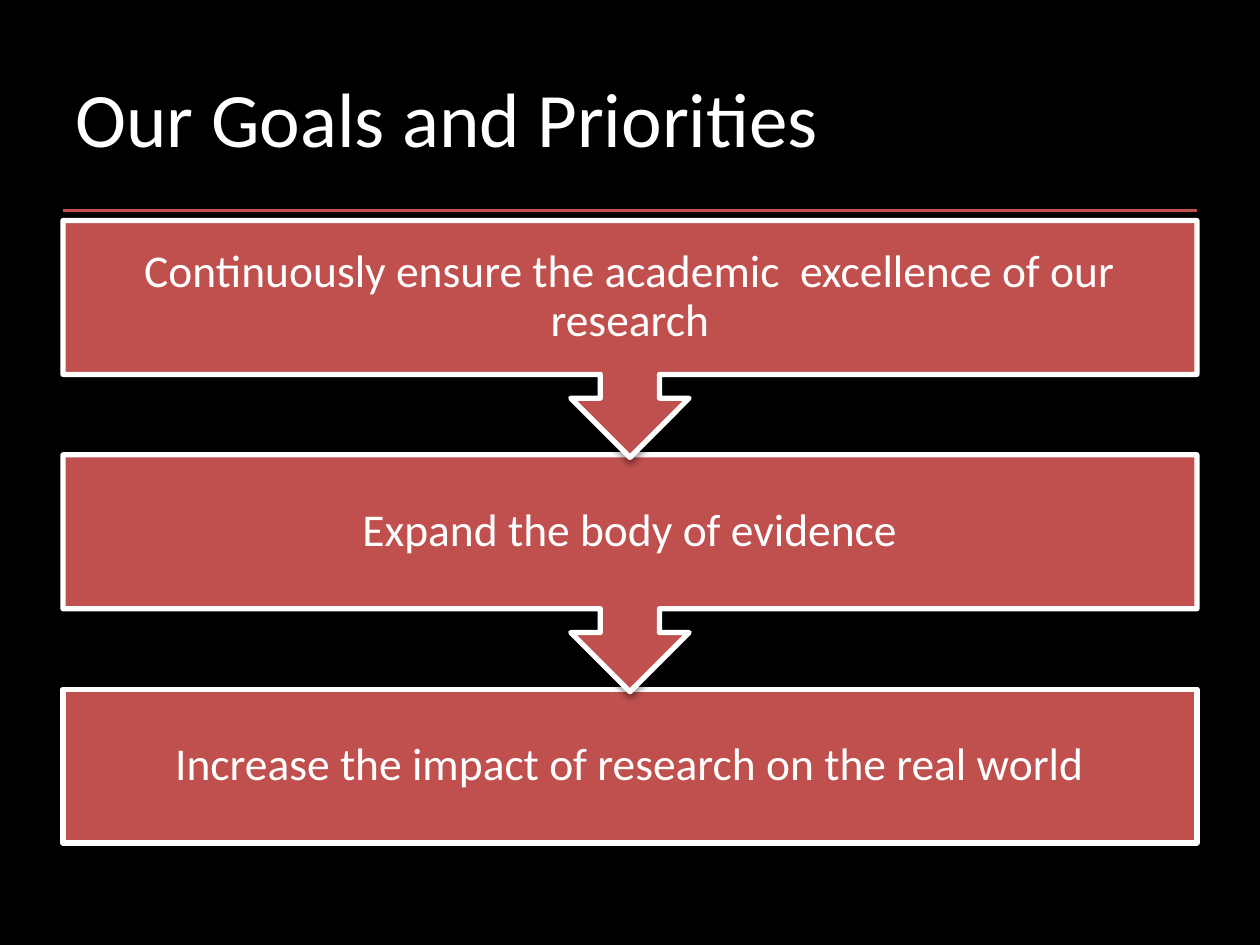
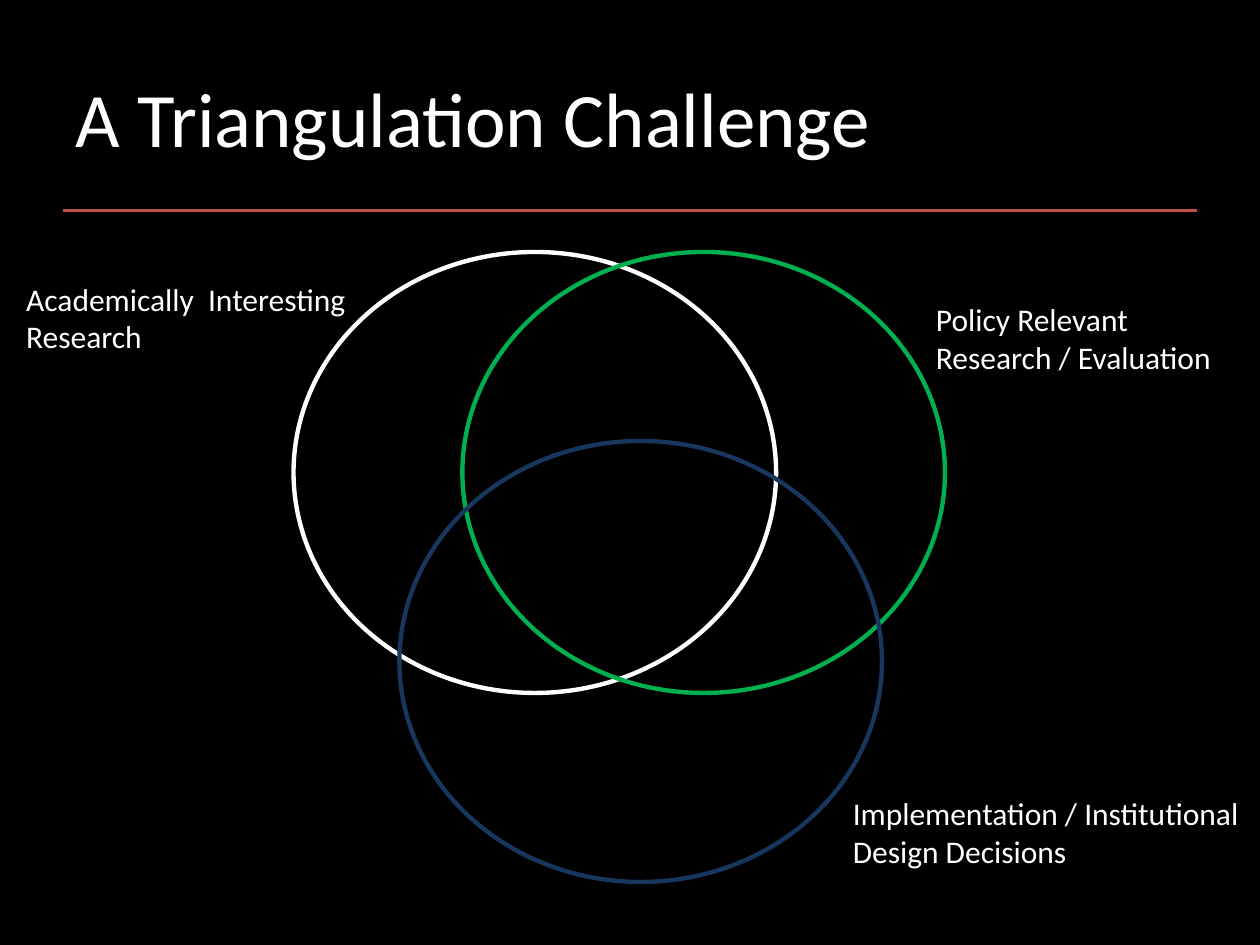
from lxml.etree import SubElement
from pptx import Presentation
from pptx.dml.color import RGBColor
from pptx.enum.shapes import MSO_CONNECTOR, MSO_SHAPE
from pptx.enum.text import MSO_ANCHOR, MSO_AUTO_SIZE, PP_ALIGN
from pptx.oxml.ns import qn
from pptx.util import Inches, Pt

COLORS = {
    "background": "000000",
    "text": "FFFFFF",
    "accent": "C0504D",
    "green": "00B050",
    "navy": "17375E",
}
FONT = "Calibri"


def add_span(para, text, size):
    span = para.add_run()
    span.text = text
    span.font.name = FONT
    span.font.size = Pt(size)
    span.font.color.rgb = RGBColor.from_string(COLORS["text"])


def add_soft_shadow(shape):
    """Add a faint shadow below a shape whose line is already set."""
    effects = SubElement(shape.element.spPr, qn("a:effectLst"))
    shadow = SubElement(effects, qn("a:outerShdw"), blurRad=str(Pt(3.1)),
                        dist=str(Pt(1.6)), dir="5400000", rotWithShape="0")
    color = SubElement(shadow, qn("a:srgbClr"), val="000000")
    SubElement(color, qn("a:alpha"), val="38000")


deck = Presentation()
deck.slide_width = Inches(10)
deck.slide_height = Inches(7.5)

# Shared background, title and rule
background = deck.slide_master.background.fill
background.solid()
background.fore_color.rgb = RGBColor.from_string(COLORS["background"])

pages = []
for heading in ["Our Goals and Priorities", "A Triangulation Challenge"]:
    page = deck.slides.add_slide(deck.slide_layouts.get_by_name("Title Only"))
    rule = page.shapes.add_connector(MSO_CONNECTOR.STRAIGHT, Inches(0.5), Inches(1.67),
                                     Inches(9.5), Inches(1.67))
    rule.line.color.rgb = RGBColor.from_string(COLORS["accent"])
    rule.line.width = Pt(2)
    add_soft_shadow(rule)

    title = page.shapes.title
    title.left, title.top = Inches(0.5), Inches(0.3)
    title.width, title.height = Inches(9), Inches(1.25)
    title.text_frame.vertical_anchor = MSO_ANCHOR.MIDDLE
    para = title.text_frame.paragraphs[0]
    para.alignment = PP_ALIGN.LEFT
    add_span(para, heading, 44)
    pages.append(page)

goals_page, challenge_page = pages

# Goals: drawn from the bottom up so each arrow tip overlaps the next box
goals = [
    "Continuously ensure the academic  excellence of our research",
    "Expand the body of evidence",
    "Increase the impact of research on the real world",
]
for step, goal in reversed(list(enumerate(goals))):
    is_last = step == len(goals) - 1
    kind = MSO_SHAPE.RECTANGLE if is_last else MSO_SHAPE.DOWN_ARROW_CALLOUT
    box = goals_page.shapes.add_shape(kind, Inches(0.5), Inches(1.75 + 1.86 * step),
                                      Inches(9), Inches(1.22 if is_last else 1.88))
    box.fill.solid()
    box.fill.fore_color.rgb = RGBColor.from_string(COLORS["accent"])
    box.line.color.rgb = RGBColor.from_string(COLORS["text"])
    box.line.width = Pt(3)
    add_soft_shadow(box)

    frame = box.text_frame
    frame.word_wrap = True
    frame.vertical_anchor = MSO_ANCHOR.MIDDLE
    frame.margin_left = frame.margin_right = Inches(0.2)
    frame.margin_top = frame.margin_bottom = Inches(0.2)
    para = frame.paragraphs[0]
    para.alignment = PP_ALIGN.CENTER
    para.line_spacing = 0.9
    add_span(para, goal, 26)

# Challenge: three overlapping circles
for left, top, color in [(2.33, 2, "text"), (3.67, 2, "green"), (3.17, 3.5, "navy")]:
    circle = challenge_page.shapes.add_shape(MSO_SHAPE.OVAL, Inches(left), Inches(top),
                                             Inches(3.83), Inches(3.5))
    circle.shadow.inherit = False
    circle.fill.background()
    circle.line.color.rgb = RGBColor.from_string(COLORS[color])
    circle.line.width = Pt(2.5)

labels = [
    (7.33, 2.33, 2.41, ["Policy Relevant", "Research / Evaluation"]),
    (0.11, 2.17, 2.77, ["Academically  Interesting", "Research"]),
    (6.67, 6.25, 3.36, ["Implementation / Institutional", "Design Decisions"]),
]
for left, top, width, lines in labels:
    label = challenge_page.shapes.add_textbox(Inches(left), Inches(top),
                                              Inches(width), Inches(0.71))
    frame = label.text_frame
    frame.word_wrap = False
    frame.auto_size = MSO_AUTO_SIZE.SHAPE_TO_FIT_TEXT
    for index, line in enumerate(lines):
        para = frame.add_paragraph() if index else frame.paragraphs[0]
        add_span(para, line, 18)

deck.save("out.pptx")
